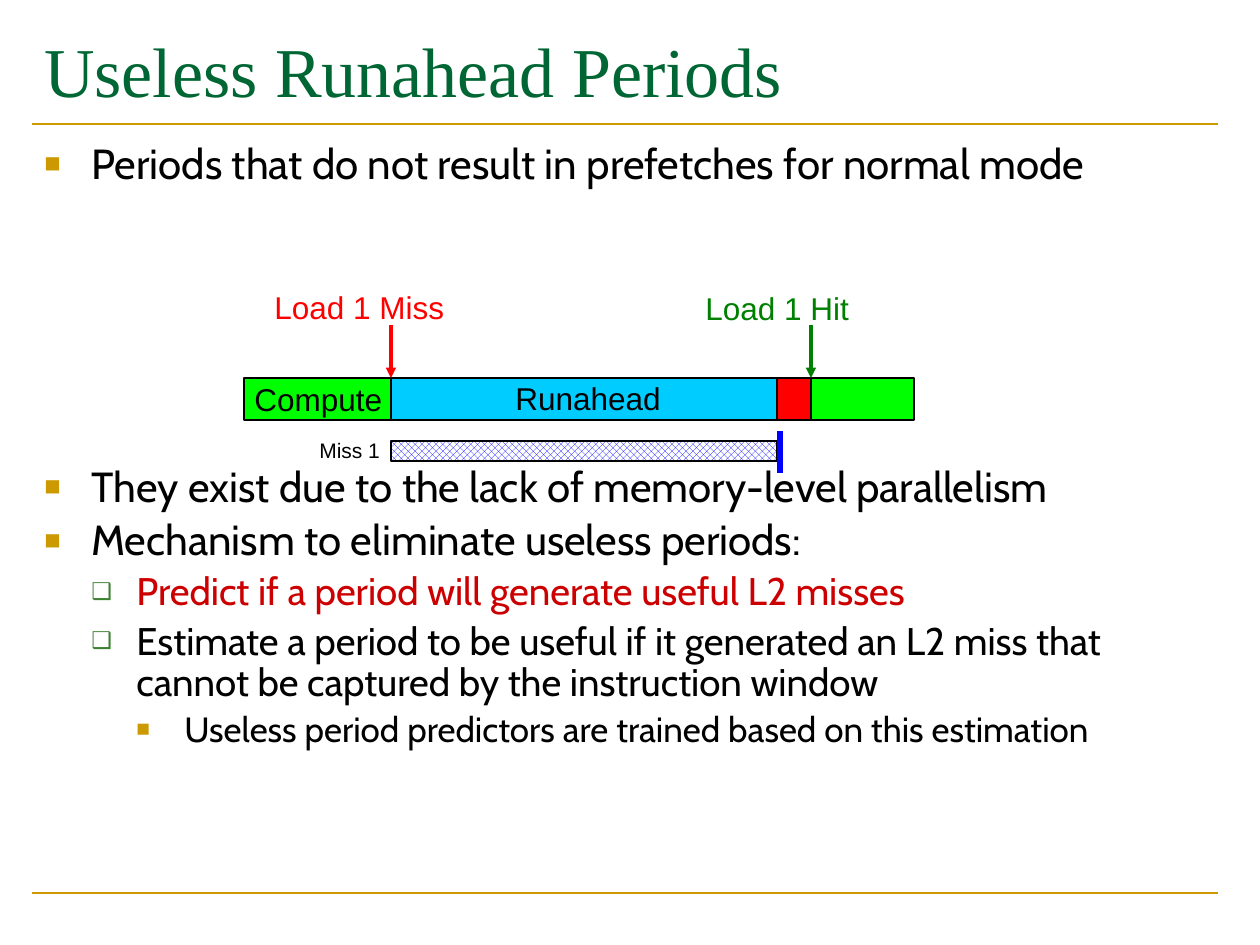
from lxml.etree import SubElement
from pptx import Presentation
from pptx.dml.color import RGBColor
from pptx.enum.dml import MSO_PATTERN
from pptx.enum.shapes import MSO_CONNECTOR, MSO_SHAPE
from pptx.oxml.ns import qn
from pptx.util import Emu, Pt

COLORS = {
    "black": "000000", "white": "FFFFFF", "gold": "CC9900",
    "title": "006633", "key": "CC0000", "leaf": "3B812F",
    "red": "FF0000", "lime": "00FF00", "sky": "00CCFF",
    "green": "008000", "blue": "0000FF",
}

# Per outline level: text margin px, size pt, bullet, bullet color, bullet %
LEVELS = [
    (47, 24, "■", "gold", 65),
    (92, 22, "❑", "leaf", 60),
    (140, 20, "■", "gold", 65),
]

# Level, color, space before pt, text; the large space holds the timeline
POINTS = [
    (0, "black", 4.8, "Periods that do not result in prefetches for normal mode"),
    (0, "black", 158.5, "They exist due to the lack of memory-level parallelism"),
    (0, "black", 4.8, "Mechanism to eliminate useless periods:"),
    (1, "key", 4.4, "Predict if a period will generate useful L2 misses"),
    (1, "black", 4.4, "Estimate a period to be useful if it generated an L2 miss "
                      "that cannot be captured by the instruction window"),
    (2, "black", 4, "Useless period predictors are trained based on this estimation"),
]

BAR_TOP, BAR_H = 378, 42
EDGES = [244, 391, 777, 811, 914]
PHASES = ["lime", "sky", "red", "lime"]


def px(n):
    return Emu(round(n * 914400 / 126))


def rgb(name):
    return RGBColor.from_string(COLORS[name])


def style(para, font, size, color):
    for run in para.runs:
        run.font.name = font
        run.font.size = Pt(size)
        run.font.color.rgb = rgb(color)


def add_text(slide, box, text, font, size, color):
    """Add one line of text, with the right inset given up so that it fits."""
    frame = slide.shapes.add_textbox(*map(px, box)).text_frame
    frame.word_wrap = False
    frame.margin_right = 0
    frame.text = text
    style(frame.paragraphs[0], font, size, color)


def add_line(slide, start, end, color, width, arrow=False):
    line = slide.shapes.add_connector(
        MSO_CONNECTOR.STRAIGHT, *map(px, start + end))
    line.line.color.rgb = rgb(color)
    line.line.width = Pt(width)
    if arrow:
        SubElement(line.line._get_or_add_ln(), qn("a:tailEnd"), type="triangle")
    SubElement(line._element.spPr, qn("a:effectLst"))


def add_bar(slide, box, color, hatch=False):
    bar = slide.shapes.add_shape(MSO_SHAPE.RECTANGLE, *map(px, box))
    bar.shadow.inherit = False
    if hatch:
        bar.fill.patterned()
        bar.fill.pattern = MSO_PATTERN.LARGE_CHECKER_BOARD
        bar.fill.back_color.rgb = rgb("white")
    else:
        bar.fill.solid()
    bar.fill.fore_color.rgb = rgb(color)
    bar.line.color.rgb = rgb("black")
    bar.line.width = Pt(0.75)


def set_bullet(para, level):
    margin, _, char, color, scale = LEVELS[level]
    outer = LEVELS[level - 1][0] if level else 0
    para.level = level
    props = para._p.get_or_add_pPr()
    props.set("marL", str(px(margin)))
    props.set("indent", str(px(outer - margin)))
    tint = SubElement(props, qn("a:buClr"))
    SubElement(tint, qn("a:srgbClr"), val=COLORS[color])
    SubElement(props, qn("a:buSzPct"), val=str(scale * 1000))
    SubElement(props, qn("a:buFont"), typeface="Arial")
    SubElement(props, qn("a:buChar"), char=char)


def add_points(slide):
    frame = slide.shapes.add_textbox(*map(px, (32, 137, 1187, 716))).text_frame
    frame.word_wrap = True
    frame.text = "\n".join(point[-1] for point in POINTS)
    for para, (level, color, gap, _) in zip(frame.paragraphs, POINTS):
        para.line_spacing = 0.9
        para.space_before = Pt(gap)
        set_bullet(para, level)
        style(para, "Cabin", LEVELS[level][1], color)


def add_timeline(slide):
    for left, right, color in zip(EDGES, EDGES[1:], PHASES):
        add_bar(slide, (left, BAR_TOP, right - left, BAR_H), color)
    miss, done, hit = EDGES[1:4]
    add_bar(slide, (miss, 441, done - miss, 20), "blue", hatch=True)
    for x, color in ((miss, "red"), (hit, "green")):
        add_line(slide, (x, 325), (x, BAR_TOP), color, 1.75, arrow=True)
    add_line(slide, (780, 431), (780, 473), "blue", 3)
    for box, text, size, color in (
        ((242, 374, 154, 50), "Compute", 18, "black"),
        ((503, 373, 170, 50), "Runahead", 18, "black"),
        ((262, 282, 195, 50), "Load 1 Miss", 18, "red"),
        ((693, 283, 169, 50), "Load 1 Hit", 18, "green"),
        ((307, 431, 86, 38), "Miss 1", 12, "black"),
    ):
        add_text(slide, box, text, "Arial", size, color)


def main():
    deck = Presentation()
    deck.slide_width, deck.slide_height = px(1260), px(945)
    slide = deck.slides.add_slide(deck.slide_layouts[6])
    for y in (124, 893):
        add_line(slide, (32, y), (1218, y), "gold", 1.5)
    add_text(slide, (32, 21, 1187, 147), "Useless Runahead Periods",
             "Times New Roman", 40, "title")
    add_points(slide)
    add_timeline(slide)
    deck.save("out.pptx")


if __name__ == "__main__":
    main()
